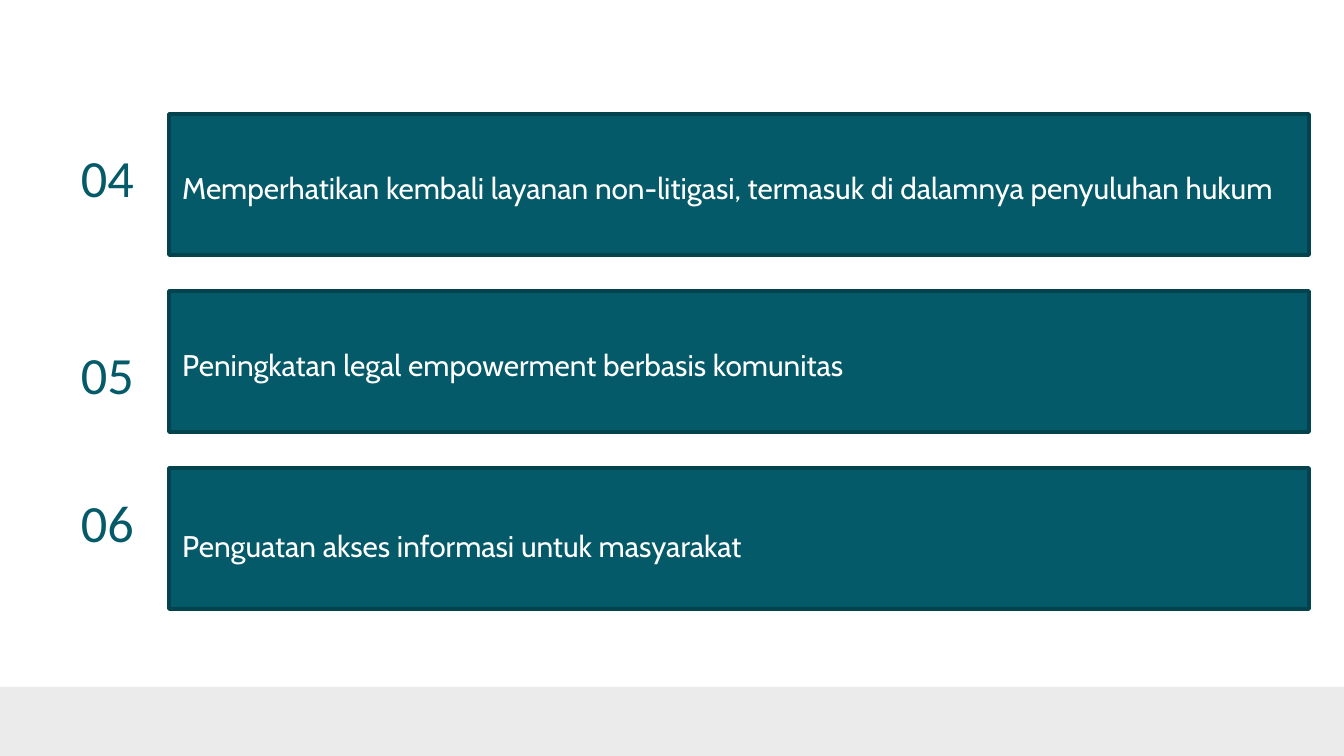
import pptx
import pptx.dml.color
import pptx.enum.shapes
import pptx.enum.text
import pptx.util

PX = 914400 / 134.4
TEAL = "045A68"
ANCHOR = pptx.enum.text.MSO_ANCHOR
ALIGN = pptx.enum.text.PP_ALIGN
RECTANGLE = pptx.enum.shapes.MSO_SHAPE.RECTANGLE


def color(value):
    return pptx.dml.color.RGBColor.from_string(value)


def add_text(page, text, bounds, font, size, fill, align=ALIGN.LEFT,
             anchor=ANCHOR.TOP, spacing=1.0):
    """Add a one-paragraph text box; bounds are left, top, width, height in px."""
    box = page.shapes.add_textbox(*[round(n * PX) for n in bounds])
    frame = box.text_frame
    frame.word_wrap = True
    frame.vertical_anchor = anchor
    frame.margin_left = frame.margin_right = pptx.util.Inches(0.1)
    frame.margin_top = frame.margin_bottom = pptx.util.Inches(0.1)
    para = frame.paragraphs[0]
    para.alignment = align
    para.line_spacing = spacing
    span = para.add_run()
    span.text = text
    span.font.name = font
    span.font.size = pptx.util.Pt(size)
    span.font.color.rgb = color(fill)


deck = pptx.Presentation()
deck.slide_width = round(1344 * PX)
deck.slide_height = round(756 * PX)
page = deck.slides.add_slide(deck.slide_layouts[6])

footer = page.shapes.add_shape(
    RECTANGLE, 0, round(687 * PX), deck.slide_width, round(69 * PX))
footer.shadow.inherit = False
footer.fill.solid()
footer.fill.fore_color.rgb = color("EBEBEB")
footer.line.fill.background()

# Number, its top, recommendation, height of the recommendation's text box
recommendations = [
    ("04", 132, "Memperhatikan kembali layanan non-litigasi, termasuk di dalamnya penyuluhan hukum", 141),
    ("05", 329, "Peningkatan legal empowerment berbasis komunitas", 141),
    ("06", 477, "Penguatan akses informasi untuk masyarakat", 149),
]
bar_left, first_top, bar_width, bar_height, pitch = 169, 114, 1140, 141, 177

for index, (number, number_top, text, text_height) in enumerate(recommendations):
    top = first_top + index * pitch
    bar = page.shapes.add_shape(
        RECTANGLE, *[round(n * PX) for n in (bar_left, top, bar_width, bar_height)])
    bar.shadow.inherit = False
    bar.fill.solid()
    bar.fill.fore_color.rgb = color(TEAL)
    bar.line.color.rgb = color("03434D")
    bar.line.width = pptx.util.Pt(2)

    add_text(page, text, (bar_left, top, bar_width, text_height), "Cabin", 16,
             "FFFFFF", anchor=ANCHOR.MIDDLE, spacing=1.15)
    add_text(page, number, (35, number_top, 112, 66), "Calibri", 28, TEAL,
             align=ALIGN.RIGHT)

deck.save("out.pptx")
